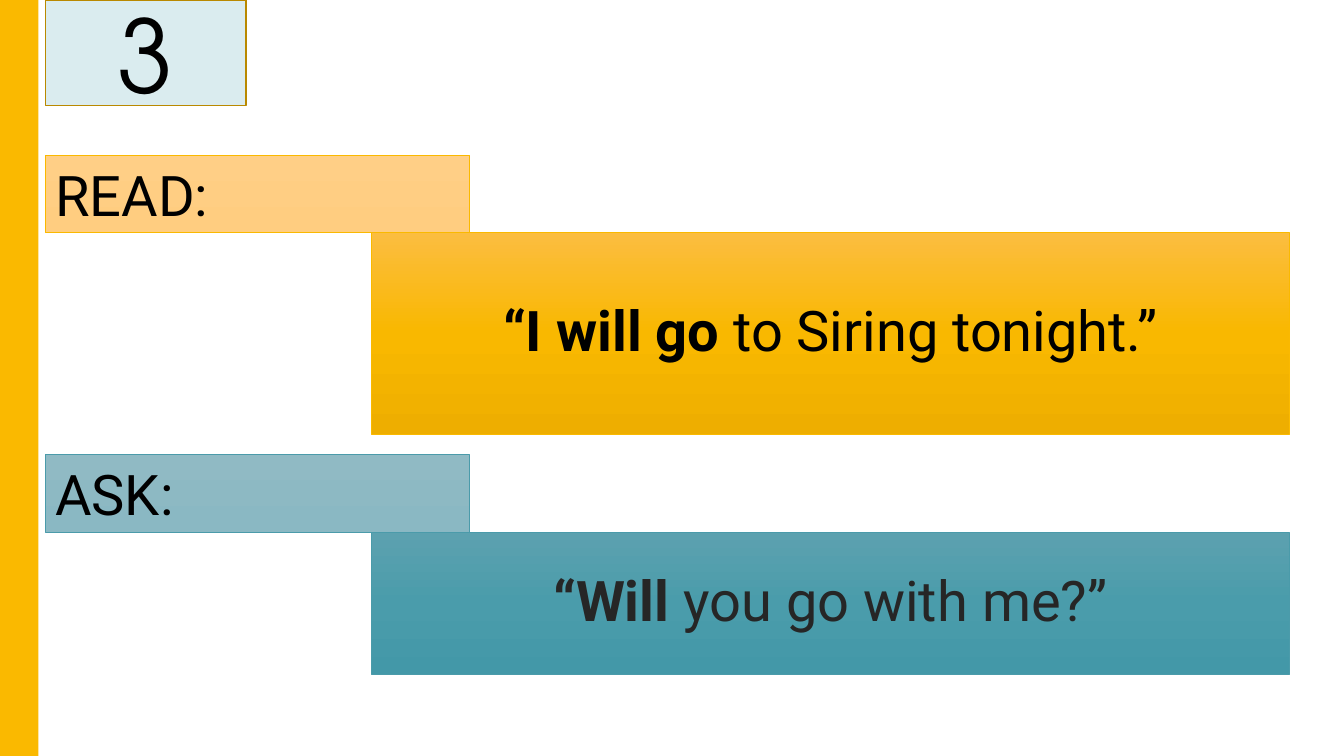
from dataclasses import dataclass

from lxml import etree
from pptx import Presentation, util as u
from pptx.dml.color import RGBColor
from pptx.enum import shapes, text
from pptx.oxml.ns import qn

WIDTH, HEIGHT = 13.33, 7.5
LEFT = 0.45
LABEL_WIDTH, LABEL_HEIGHT = 4.21, 0.77
SPEECH_LEFT, SPEECH_WIDTH = 3.68, 9.11


@dataclass(frozen=True)
class Theme:
    """Colours, fonts and type sizes of the slide."""
    gold: str = "FAB900"
    dark_gold: str = "B98900"
    teal: str = "4B9BAA"
    pale_teal: str = "DAECEF"
    black: str = "000000"
    charcoal: str = "262626"
    read_label: tuple = ("FFCF86", "FFCD80")
    read_speech: tuple = ("FBBD40", "F9B800", "EEAE00")
    ask_label: tuple = ("90BAC4", "8AB8C3")
    ask_speech: tuple = ("5CA1AF", "4A9CAB", "4398A8")
    body_font: str = "Roboto"
    number_font: str = "TeX Gyre Adventor"
    body_size: int = 40
    number_size: int = 72


THEME = Theme()


def paint_gradient(shape, colours):
    """Fill a shape from top to bottom with evenly spaced colours."""
    shape.fill.gradient()
    shape.fill.gradient_angle = 270
    stops = shape.element.spPr.find(".//" + qn("a:gsLst"))
    for stop in list(stops):
        stops.remove(stop)
    for index, colour in enumerate(colours):
        position = 100000 * index // (len(colours) - 1)
        stop = etree.SubElement(stops, qn("a:gs"), pos=str(position))
        etree.SubElement(stop, qn("a:srgbClr"), val=colour)


def add_panel(slide, box, fill, line=None, line_width=0.5):
    """Add a rectangle with a plain or gradient fill."""
    panel = slide.shapes.add_shape(
        shapes.MSO_SHAPE.RECTANGLE, *(u.Inches(length) for length in box))
    panel.shadow.inherit = False
    if isinstance(fill, tuple):
        paint_gradient(panel, fill)
    else:
        panel.fill.solid()
        panel.fill.fore_color.rgb = RGBColor.from_string(fill)
    if line:
        panel.line.color.rgb = RGBColor.from_string(line)
        panel.line.width = u.Pt(line_width)
    else:
        panel.line.fill.background()
    return panel


def write(panel, *runs, colour=THEME.black, size=THEME.body_size,
          font=THEME.body_font, align=text.PP_ALIGN.CENTER,
          anchor=text.MSO_ANCHOR.MIDDLE, inset=None, spacing=None):
    """Write (wording, bold) runs into a panel."""
    frame = panel.text_frame
    frame.word_wrap = True
    frame.vertical_anchor = anchor
    if inset is not None:
        frame.margin_left = frame.margin_right = u.Inches(inset)
        frame.margin_top = frame.margin_bottom = u.Inches(inset)
    paragraph = frame.paragraphs[0]
    paragraph.alignment = align
    if spacing:
        paragraph.line_spacing = spacing
    for wording, bold in runs:
        run = paragraph.add_run()
        run.text = wording
        run.font.name = font
        run.font.size = u.Pt(size)
        run.font.bold = bold
        run.font.color.rgb = RGBColor.from_string(colour)


def add_number(slide, box, number):
    """Add the exercise number in its tile."""
    tile = add_panel(slide, box, THEME.pale_teal, THEME.dark_gold, 1)
    write(tile, (number, False), size=THEME.number_size, font=THEME.number_font)


def add_prompt(slide, top, speech_height, label, speech, label_fill,
               speech_fill, line, colour):
    """Add an instruction label with its speech panel stepped below it."""
    tab = add_panel(slide, (LEFT, top, LABEL_WIDTH, LABEL_HEIGHT), label_fill, line)
    write(tab, (label, False), align=text.PP_ALIGN.LEFT, anchor=text.MSO_ANCHOR.TOP)
    speech_box = (SPEECH_LEFT, top + LABEL_HEIGHT, SPEECH_WIDTH, speech_height)
    panel = add_panel(slide, speech_box, speech_fill, line)
    write(panel, *speech, colour=colour, inset=0.2, spacing=0.9)


def main():
    """Build and save the slide."""
    deck = Presentation()
    deck.slide_width, deck.slide_height = u.Inches(WIDTH), u.Inches(HEIGHT)
    slide = deck.slides.add_slide(deck.slide_layouts[6])
    add_panel(slide, (0, 0, 0.38, HEIGHT), THEME.gold)
    add_number(slide, (LEFT, 0, 1.99, 1.05), "3")
    add_prompt(slide, 1.54, 2, "READ:",
               [("“I will go", True), (" to Siring tonight.”", False)],
               THEME.read_label, THEME.read_speech, THEME.gold, THEME.black)
    add_prompt(slide, 4.51, 1.41, "ASK:",
               [("“Will ", True), ("you go with me?”", False)],
               THEME.ask_label, THEME.ask_speech, THEME.teal, THEME.charcoal)
    deck.save("out.pptx")


if __name__ == "__main__":
    main()
